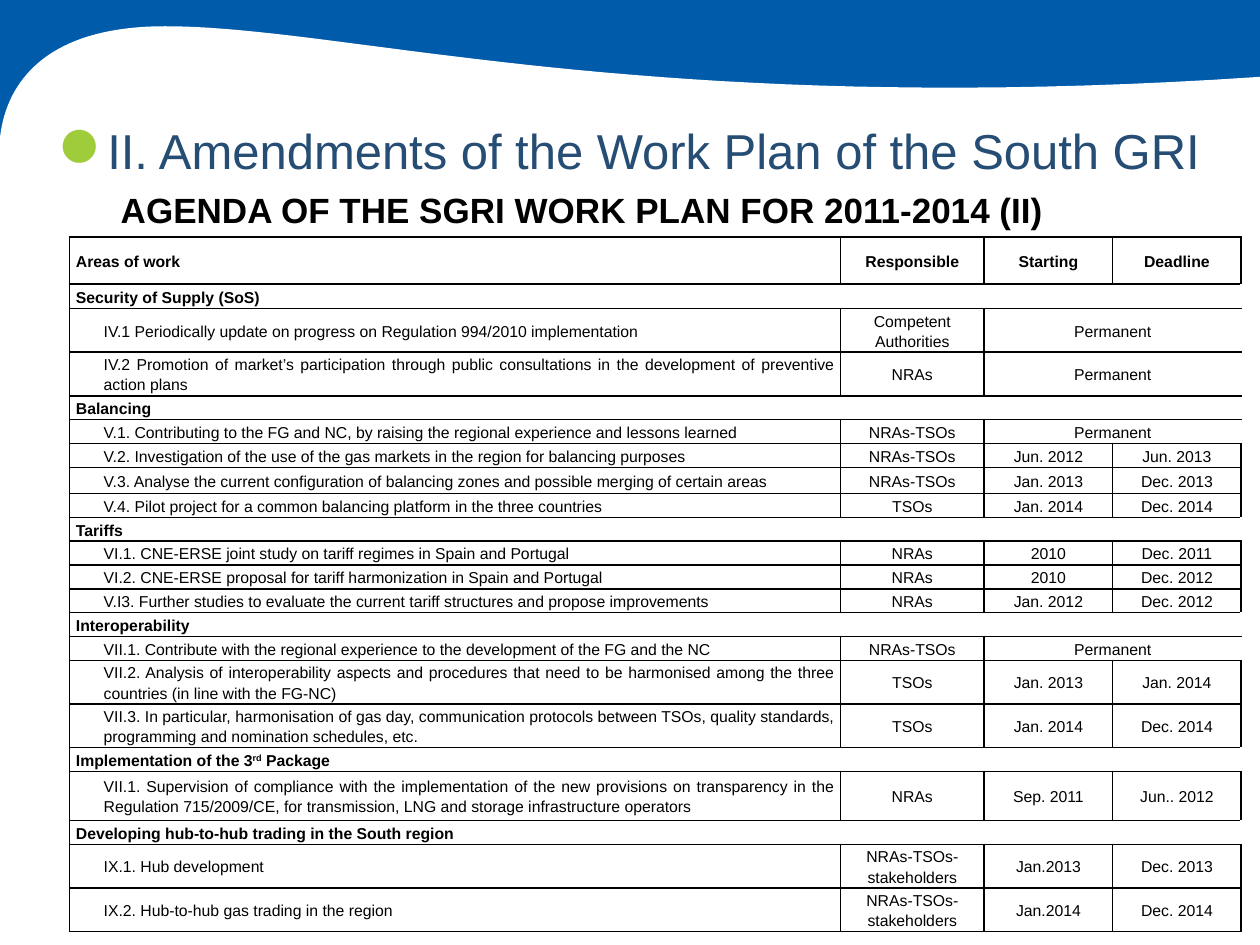
from lxml.etree import SubElement
from pptx import Presentation
from pptx.dml.color import RGBColor
from pptx.enum.shapes import MSO_SHAPE
from pptx.enum.text import MSO_ANCHOR, PP_ALIGN
from pptx.oxml.ns import qn
from pptx.util import Cm, Pt

BLUE = RGBColor(0x00, 0x5B, 0xAB)
NAVY = RGBColor(0x26, 0x4D, 0x74)
GREEN = RGBColor(0x9E, 0xCC, 0x3B)
BLACK = RGBColor(0, 0, 0)
WHITE = RGBColor(0xFF, 0xFF, 0xFF)

HEADING = "II. Amendments of the Work Plan of the South GRI"
TITLE = "AGENDA OF THE SGRI WORK PLAN FOR 2011-2014 (II)"
HEAD = [("Areas of work", "Responsible", "Starting", "Deadline")]
# One entry is a section; the last entry of a row spans the columns left over.
ROWS = [
    ("Security of Supply (SoS)",),
    ("IV.1 Periodically update on progress on Regulation 994/2010 implementation",
     "Competent Authorities", "Permanent"),
    ("IV.2 Promotion of market’s participation through public consultations "
     "in the development of preventive action plans", "NRAs", "Permanent"),
    ("Balancing",),
    ("V.1. Contributing to the FG and NC, by raising the regional experience "
     "and lessons learned", "NRAs-TSOs", "Permanent"),
    ("V.2. Investigation of the use of the gas markets in the region for "
     "balancing purposes", "NRAs-TSOs", "Jun. 2012", "Jun. 2013"),
    ("V.3. Analyse the current configuration of balancing zones and possible "
     "merging of certain areas", "NRAs-TSOs", "Jan. 2013", "Dec. 2013"),
    ("V.4. Pilot project for a common balancing platform in the three countries",
     "TSOs", "Jan. 2014", "Dec. 2014"),
    ("Tariffs",),
    ("VI.1. CNE-ERSE joint study on tariff regimes in Spain and Portugal",
     "NRAs", "2010", "Dec. 2011"),
    ("VI.2. CNE-ERSE proposal for tariff harmonization in Spain and Portugal",
     "NRAs", "2010", "Dec. 2012"),
    ("V.I3. Further studies to evaluate the current tariff structures and "
     "propose improvements", "NRAs", "Jan. 2012", "Dec. 2012"),
    ("Interoperability",),
    ("VII.1. Contribute with the regional experience to the development of the "
     "FG and the NC", "NRAs-TSOs", "Permanent"),
    ("VII.2. Analysis of interoperability aspects and procedures that need to be "
     "harmonised among the three countries (in line with the FG-NC)",
     "TSOs", "Jan. 2013", "Jan. 2014"),
    ("VII.3. In particular, harmonisation of gas day, communication protocols "
     "between TSOs, quality standards, programming and nomination schedules, etc.",
     "TSOs", "Jan. 2014", "Dec. 2014"),
    ("Implementation of the 3^rd^ Package",),
    ("VII.1. Supervision of compliance with the implementation of the new "
     "provisions on transparency in the Regulation 715/2009/CE, for transmission, "
     "LNG and storage infrastructure operators", "NRAs", "Sep. 2011", "Jun.. 2012"),
    ("Developing hub-to-hub trading in the South region",),
    ("IX.1. Hub development", "NRAs-TSOs-stakeholders", "Jan.2013", "Dec. 2013"),
    ("IX.2. Hub-to-hub gas trading in the region", "NRAs-TSOs-stakeholders",
     "Jan.2014", "Dec. 2014"),
]
COLS = [15.54, 2.9, 2.59, 2.59]
LINE, PAIR = 0.48, 0.88
EXTRA = {6: 0.53, 17: 0.99}

# Upper edge of the white page: Bezier arcs, in cm
ARCS = [
    [(0, 2.79), (0.08, 2.01), (0.58, 0.53), (3.33, 0.53)],
    [(3.33, 0.53), (7.01, 0.53), (12.95, 2.39), (25.4, 1.55)],
]
STEPS = 40


def trace(arc):
    """Points along a cubic Bezier arc, without its start."""
    for step in range(1, STEPS + 1):
        t = step / STEPS
        mix = ((1 - t) ** 3, 3 * t * (1 - t) ** 2, 3 * t * t * (1 - t), t ** 3)
        yield tuple(Cm(sum(m * p[axis] for m, p in zip(mix, arc)))
                    for axis in (0, 1))


def paint(shape, color):
    shape.shadow.inherit = False
    shape.fill.solid()
    shape.fill.fore_color.rgb = color
    shape.line.fill.background()


def style(font, size, color, bold=False):
    font.name, font.size, font.bold = "Arial", Pt(size), bold
    font.color.rgb = color


def add_label(slide, text, box, size, color, anchor):
    label = slide.shapes.add_textbox(*map(Cm, box))
    frame = label.text_frame
    frame.text = text
    frame.word_wrap = True
    frame.vertical_anchor = anchor
    para = frame.paragraphs[0]
    para.alignment = PP_ALIGN.CENTER
    style(para.runs[0].font, size, color)
    return frame


def rule(cell, sides):
    """Draw 1 pt black lines on the given sides."""
    props = cell._tc.get_or_add_tcPr()
    for side in sides:
        line = SubElement(props, qn("a:ln" + side), w=str(Pt(1)))
        fill = SubElement(line, qn("a:solidFill"))
        SubElement(fill, qn("a:srgbClr"), val=str(BLACK))


def write(cell, text, col, bold):
    cell.vertical_anchor = MSO_ANCHOR.MIDDLE
    cell.margin_left = cell.margin_right = Cm(0.13)
    cell.margin_top = cell.margin_bottom = 0
    para = cell.text_frame.paragraphs[0]
    para.line_spacing = 1.15
    for part, words in enumerate(text.split("^")):
        run = para.add_run()
        run.text = words
        style(run.font, 9, BLACK, bold)
        if part % 2:
            run._r.get_or_add_rPr().set("baseline", "30000")
    if col:
        para.alignment = PP_ALIGN.CENTER
    elif not bold:
        para.alignment = PP_ALIGN.JUSTIFY
        para._p.get_or_add_pPr().set("marL", str(Cm(0.56)))


def add_grid(slide, rows, top, tall):
    frame = slide.shapes.add_table(len(rows), len(COLS), Cm(1.4), Cm(top),
                                   Cm(sum(COLS)), Cm(sum(tall)))
    table = frame.table
    table.first_row = table.horz_banding = False
    for col, width in zip(table.columns, COLS):
        col.width = Cm(width)
    for row, height in zip(table.rows, tall):
        row.height = Cm(height)
    last = len(COLS) - 1
    for y, row in enumerate(rows):
        end = len(row) - 1
        for x in range(len(COLS)):
            cell = table.cell(y, x)
            sides = (["L"] if x <= end else []) + (["R"] if x < end or x == last else [])
            rule(cell, sides + ["T", "B"])
            cell.fill.solid()
            cell.fill.fore_color.rgb = WHITE
            if x <= end:
                write(cell, row[x], x, end == 0 or rows is HEAD)
        if end < last:
            table.cell(y, end).merge(table.cell(y, last))
    return table


def main():
    deck = Presentation()
    deck.slide_width, deck.slide_height = Cm(25.4), Cm(19.05)
    slide = deck.slides.add_slide(deck.slide_layouts[5])
    shapes = slide.shapes

    band = shapes.add_shape(MSO_SHAPE.RECTANGLE, 0, 0, Cm(25.4), Cm(2.92))
    paint(band, BLUE)
    pen = shapes.build_freeform(Cm(0), Cm(2.79))
    for arc in ARCS:
        pen.add_line_segments(list(trace(arc)), close=False)
    pen.add_line_segments([(Cm(25.4), Cm(19.05)), (0, Cm(19.05))], close=True)
    paint(pen.convert_to_shape(), WHITE)

    add_label(slide, "●", (0.89, 1.45, 1.4, 2.39), 44, GREEN, MSO_ANCHOR.BOTTOM)
    frame = add_label(slide, HEADING, (1.27, 1.96, 24.13, 1.7), 28, NAVY,
                      MSO_ANCHOR.TOP)
    frame.margin_top, frame.margin_right = Cm(0.23), Cm(0.57)
    frame.paragraphs[0].line_spacing = 1.2

    title = shapes.title
    shapes.element.append(title.element)  # in front of the white page
    title.left, title.top = Cm(2.18), Cm(3.76)
    title.width, title.height = Cm(21.77), Cm(1.19)
    title.text_frame.text = TITLE
    title.text_frame.vertical_anchor = MSO_ANCHOR.TOP
    para = title.text_frame.paragraphs[0]
    para.alignment = PP_ALIGN.LEFT
    para.line_spacing = 0.9
    style(para.runs[0].font, 20, BLACK, True)

    tall = [EXTRA.get(y, PAIR if len(row[0]) > 100 or len(row) > 1
                      and len(row[1]) > 12 else LINE)
            for y, row in enumerate(ROWS)]
    add_grid(slide, ROWS, 5.74, tall)
    add_grid(slide, HEAD, 4.78, [0.94])
    deck.save("out.pptx")


if __name__ == "__main__":
    main()
